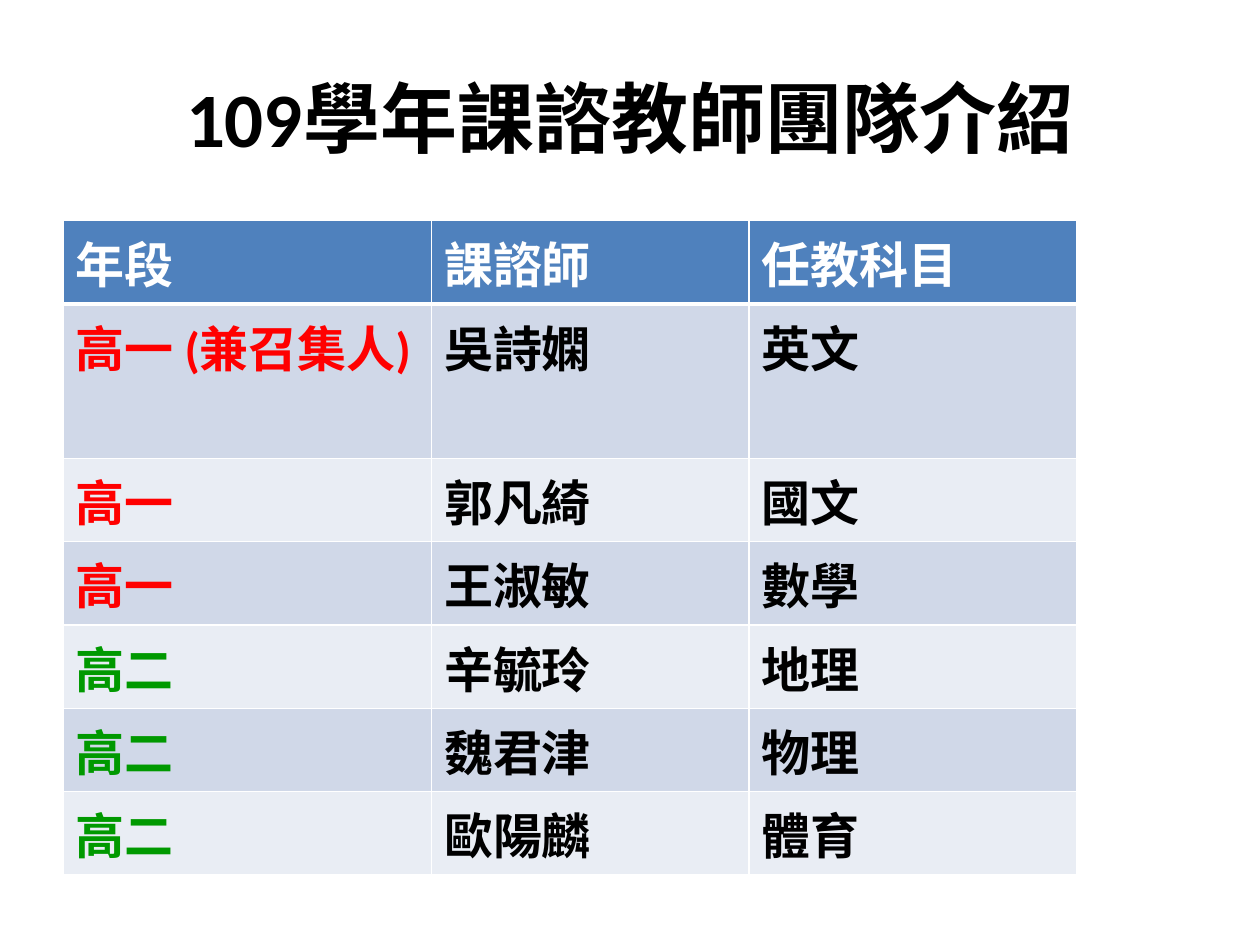
from dataclasses import dataclass

from lxml.etree import SubElement
from pptx import Presentation
from pptx.dml.color import RGBColor as Color
from pptx.enum.text import MSO_ANCHOR as Anchor, PP_ALIGN as Align
from pptx.oxml.ns import qn
from pptx.util import Cm, Pt


@dataclass(frozen=True)
class Theme:
    font: str = "Calibri"
    title_size: int = 44
    table_size: int = 28
    ink: str = "000000"
    header_ink: str = "FFFFFF"
    first_year: str = "FF0000"
    second_year: str = "009900"
    header_fill: str = "4F81BD"
    border: str = "FFFFFF"
    bands: tuple = ("D0D8E8", "E9EDF4")


THEME = Theme()
TITLE = "109學年課諮教師團隊介紹"
HEADER = ("年段", "課諮師", "任教科目")
TEACHERS = (
    ("高一 (兼召集人)", "吳詩嫻", "英文"),
    ("高一", "郭凡綺", "國文"),
    ("高一", "王淑敏", "數學"),
    ("高二", "辛毓玲", "地理"),
    ("高二", "魏君津", "物理"),
    ("高二", "歐陽麟", "體育"),
)
COLUMN_WIDTHS = (7.43, 6.4, 6.6)
LINE_ROW = 1.68
WRAPPED_ROW = 3.11
ROW_HEIGHTS = (LINE_ROW, WRAPPED_ROW) + (LINE_ROW,) * (len(TEACHERS) - 1)


def add_span(para, text, size, color):
    span = para.add_run()
    span.text = text
    span.font.name = THEME.font
    span.font.size = Pt(size)
    span.font.bold = True
    span.font.color.rgb = Color.from_string(color)


def add_title(page):
    box = page.shapes.add_textbox(Cm(1.27), Cm(0.76), Cm(22.86), Cm(3.18))
    frame = box.text_frame
    frame.word_wrap = True
    frame.vertical_anchor = Anchor.MIDDLE
    para = frame.paragraphs[0]
    para.alignment = Align.CENTER
    add_span(para, TITLE, THEME.title_size, THEME.ink)


def add_border(cell, side, points):
    properties = cell._tc.get_or_add_tcPr()
    line = SubElement(properties, qn(f"a:{side}"), w=str(Pt(points)))
    fill = SubElement(line, qn("a:solidFill"))
    SubElement(fill, qn("a:srgbClr"), val=THEME.border)


def fill_row(cells, texts, colors, fill, top, bottom):
    for cell, text, color in zip(cells, texts, colors):
        for side, points in (("lnL", 1), ("lnR", 1), ("lnT", top), ("lnB", bottom)):
            add_border(cell, side, points)
        cell.fill.solid()
        cell.fill.fore_color.rgb = Color.from_string(fill)
        add_span(cell.text_frame.paragraphs[0], text, THEME.table_size, color)


def add_teacher_table(page):
    table = page.shapes.add_table(
        len(ROW_HEIGHTS), len(HEADER), Cm(1.27), Cm(4.45),
        Cm(sum(COLUMN_WIDTHS)), Cm(sum(ROW_HEIGHTS)),
    ).table
    for column, width in zip(table.columns, COLUMN_WIDTHS):
        column.width = Cm(width)
    for row, height in zip(table.rows, ROW_HEIGHTS):
        row.height = Cm(height)
    header, *rows = table.rows
    header_colors = [THEME.header_ink] * len(HEADER)
    fill_row(header.cells, HEADER, header_colors, THEME.header_fill, 1, 3)
    for index, (row, texts) in enumerate(zip(rows, TEACHERS)):
        is_first = texts[0].startswith("高一")
        year_color = THEME.first_year if is_first else THEME.second_year
        colors = (year_color, THEME.ink, THEME.ink)
        top = 3 if index == 0 else 1
        fill_row(row.cells, texts, colors, THEME.bands[index % 2], top, 1)


def main():
    deck = Presentation()
    deck.slide_width, deck.slide_height = Cm(25.4), Cm(19.05)
    page = deck.slides.add_slide(deck.slide_layouts[6])
    add_title(page)
    add_teacher_table(page)
    deck.save("out.pptx")


if __name__ == "__main__":
    main()
